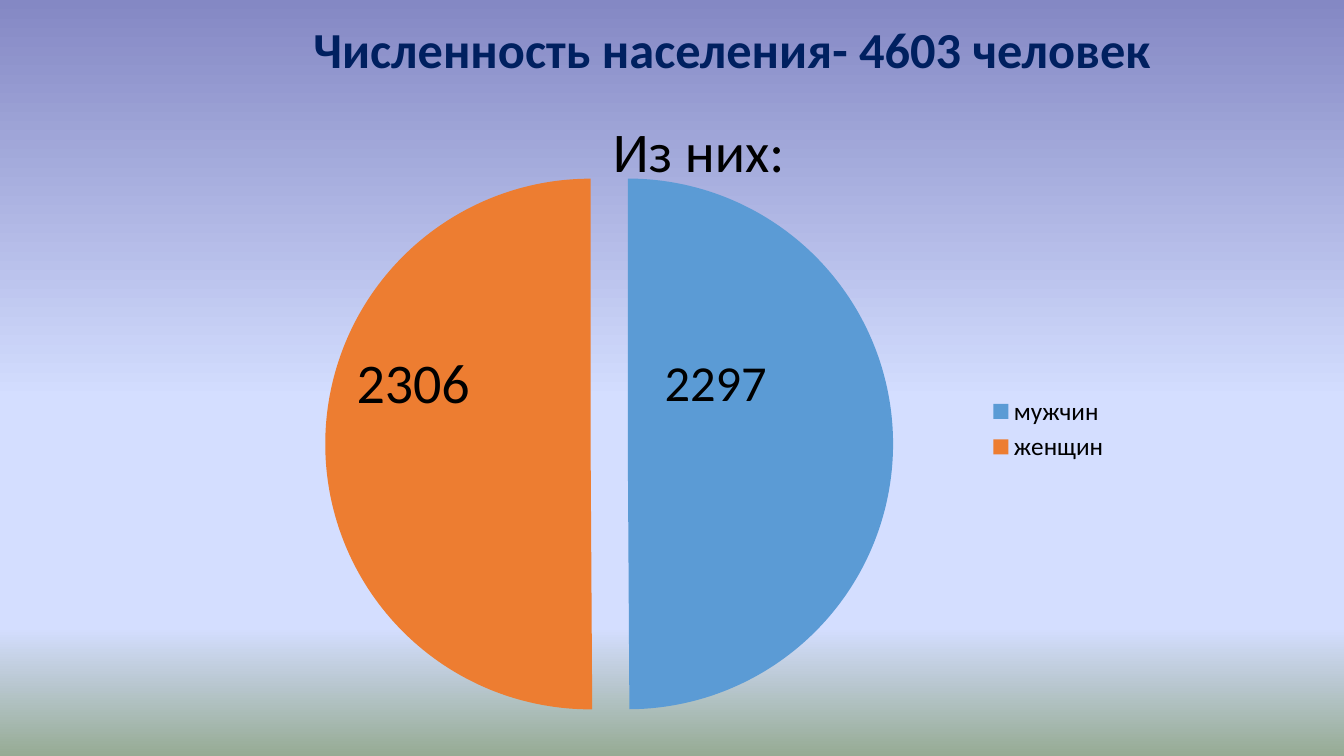
from lxml.etree import SubElement
from pptx import Presentation
from pptx.chart.data import CategoryChartData
from pptx.dml.color import RGBColor
from pptx.enum.chart import XL_CHART_TYPE, XL_LABEL_POSITION, XL_LEGEND_POSITION
from pptx.enum.text import MSO_ANCHOR, MSO_AUTO_SIZE, PP_ALIGN
from pptx.oxml import parse_xml
from pptx.oxml.ns import nsdecls, qn
from pptx.util import Pt

COLORS = {"navy": "002060", "black": "000000", "men": "5B9BD5", "women": "ED7D31",
          "dusk": "8488C4", "sky": "D4DEFF", "grass": "96AB94"}


def rgb(name):
    return RGBColor.from_string(COLORS[name])


def manual_layout(**values):
    """Return a c:layout element with the given children, in order."""
    body = "".join(f'<c:{tag} val="{val}"/>' for tag, val in values.items())
    return parse_xml(f'<c:layout {nsdecls("c")}><c:manualLayout>{body}'
                     '</c:manualLayout></c:layout>')


class SlideBuilder:
    font = "Calibri"

    def __init__(self, prs):
        self.s = prs.slides.add_slide(prs.slide_layouts[5])

    def format_font(self, font, size, color="black", bold=False):
        font.name = self.font
        font.size = Pt(size)
        font.bold = bold
        font.color.rgb = rgb(color)

    def put_text(self, sp, text, size, color="black", bold=False,
                 align=PP_ALIGN.LEFT, wrap=True):
        tf = sp.text_frame
        tf.word_wrap = wrap
        tf.auto_size = MSO_AUTO_SIZE.SHAPE_TO_FIT_TEXT
        tf.vertical_anchor = MSO_ANCHOR.TOP
        p = tf.paragraphs[0]
        p.alignment = align
        r = p.add_run()
        r.text = text
        self.format_font(r.font, size, color, bold)

    def background(self, stops):
        """Fill the background from top to bottom with (percent, colour) stops."""
        fill = self.s.background.fill
        fill.gradient()
        fill.gradient_angle = 270
        gs_lst = self.s.element.find(".//" + qn("a:gsLst"))
        for gs in list(gs_lst):
            gs_lst.remove(gs)
        for percent, color in stops:
            gs = SubElement(gs_lst, qn("a:gs"), pos=str(percent * 1000))
            SubElement(gs, qn("a:srgbClr"), val=COLORS[color])

    def title(self, text, x, y, w, h, **fmt):
        sp = self.s.shapes.title
        sp.left, sp.top, sp.width, sp.height = Pt(x), Pt(y), Pt(w), Pt(h)
        self.put_text(sp, text, **fmt)

    def text(self, text, x, y, w, h, **fmt):
        sp = self.s.shapes.add_textbox(Pt(x), Pt(y), Pt(w), Pt(h))
        self.put_text(sp, text, **fmt)

    def pie(self, slices, x, y, w, h, explosion):
        """Draw slices of (name, value, colour, label size, label offset)."""
        data = CategoryChartData()
        data.categories = [name for name, *_ in slices]
        data.add_series("Series 1", [value for _, value, *_ in slices])
        chart = self.s.shapes.add_chart(XL_CHART_TYPE.PIE, Pt(x), Pt(y),
                                        Pt(w), Pt(h), data).chart
        self.format_font(chart.font, 18)
        chart.has_title = False
        chart.has_legend = True
        chart.legend.position = XL_LEGEND_POSITION.RIGHT
        chart.legend.include_in_layout = False

        plot = chart.plots[0]
        plot.vary_by_categories = True
        area = plot._element.getparent()
        for old in area.findall(qn("c:layout")):
            area.remove(old)
        area.insert(0, manual_layout(layoutTarget="inner", xMode="edge", yMode="edge",
                                     x=0.02, y=0.05, w=0.82, h=0.95))

        series = plot.series[0]
        series._element.find(qn("c:tx")).addnext(
            parse_xml(f'<c:explosion {nsdecls("c")} val="{explosion}"/>'))
        series.data_labels.show_value = True
        for i, (_, _, color, size, (dx, dy)) in enumerate(slices):
            point = series.points[i]
            point.format.fill.solid()
            point.format.fill.fore_color.rgb = rgb(color)
            label = point.data_label
            self.format_font(label.font, size)
            label.position = XL_LABEL_POSITION.CENTER
            idx = series._element.findall(".//" + qn("c:dLbl"))[i].find(qn("c:idx"))
            idx.addnext(manual_layout(x=dx, y=dy))


def main():
    prs = Presentation()
    prs.slide_width, prs.slide_height = Pt(960), Pt(540)
    slide = SlideBuilder(prs)
    slide.background([(0, "dusk"), (53, "sky"), (83, "sky"), (100, "grass")])
    slide.title("Численность населения- 4603 человек", 135.4, 9.4, 775.4, 51,
                size=36, color="navy", bold=True, align=PP_ALIGN.CENTER)
    slide.text("Из них:", 430.6, 80, 138.2, 55.4, size=40, wrap=False)
    slide.pie([("мужчин", 2297, "men", 36, (-0.05, -0.1)),
               ("женщин", 2306, "women", 40, (-0.05, -0.1))],
              160, 93, 640, 427, explosion=7)
    prs.save("out.pptx")


if __name__ == "__main__":
    main()
